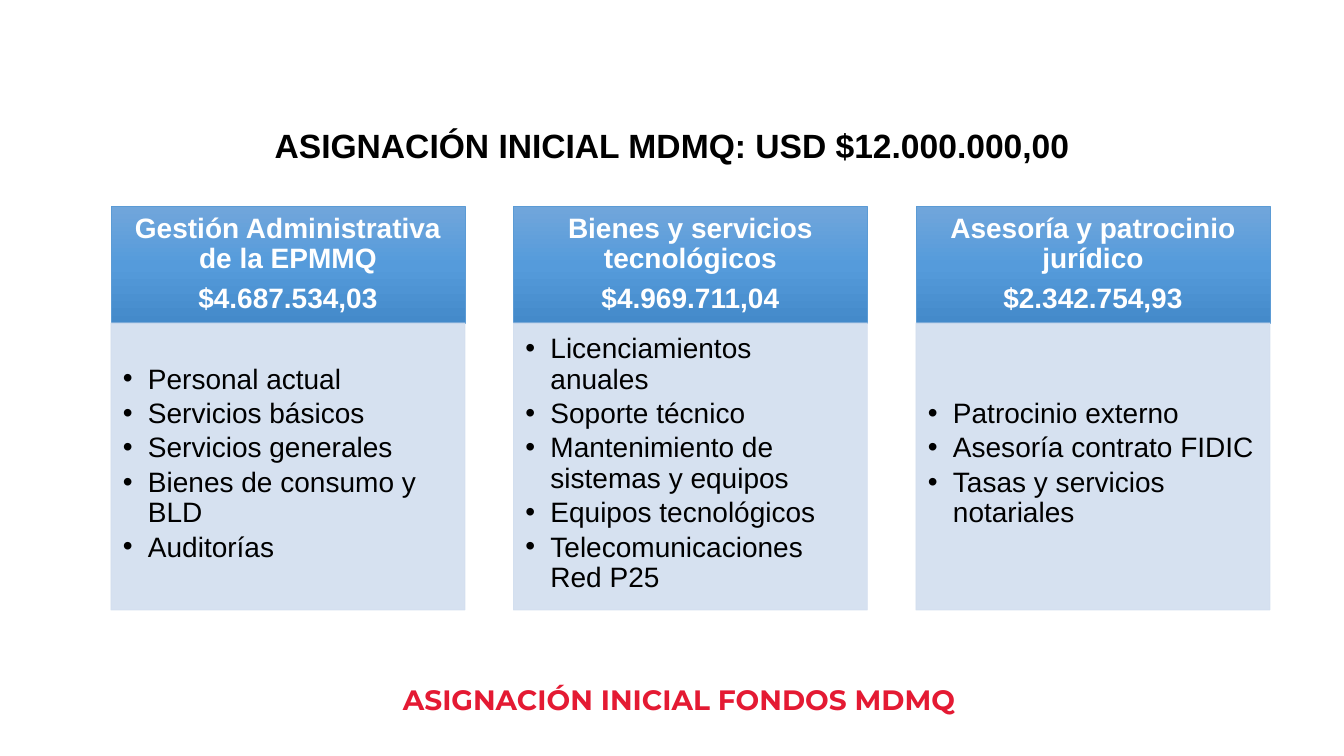
"""Build the slide on the initial MDMQ budget allocation."""
from copy import deepcopy
from dataclasses import dataclass

from lxml.etree import SubElement
from pptx import Presentation
from pptx.dml.color import RGBColor as Rgb
from pptx.enum.shapes import MSO_SHAPE as Shape
from pptx.enum.text import MSO_ANCHOR as Anchor, PP_ALIGN as Align
from pptx.oxml.ns import qn
from pptx.util import Pt

TITLE = "ASIGNACIÓN INICIAL MDMQ: USD $12.000.000,00"
FOOT = "ASIGNACIÓN INICIAL FONDOS MDMQ"
FUNDS = [
    ("Gestión Administrativa de la EPMMQ", "$4.687.534,03",
     ["Personal actual", "Servicios básicos", "Servicios generales",
      "Bienes de consumo y BLD", "Auditorías"]),
    ("Bienes y servicios tecnológicos", "$4.969.711,04",
     ["Licenciamientos anuales", "Soporte técnico",
      "Mantenimiento de sistemas y equipos", "Equipos tecnológicos",
      "Telecomunicaciones Red P25"]),
    ("Asesoría y patrocinio jurídico", "$2.342.754,93",
     ["Patrocinio externo", "Asesoría contrato FIDIC",
      "Tasas y servicios notariales"]),
]


@dataclass(frozen=True)
class Theme:
    """Colours, fonts and type sizes."""
    sans: str = "Arial"
    brand: str = "Montserrat"
    big: int = 24
    text: int = 20
    dark: str = "000000"
    light: str = "FFFFFF"
    red: str = "E41A33"
    edge: str = "5B9BD5"
    pale: str = "D2DEEF"
    fade: tuple = ((0, "71A6DB"), (0.5, "559BDB"), (1, "448ACA"))


THEME = Theme()
LEFT, RIGHT, WIDE = 111, 1270, 354
TOP, HEAD, BODY = 206, 117, 287
STEP = (RIGHT - LEFT - WIDE) / (len(FUNDS) - 1)


def px(n):
    """Turn pixels into EMU."""
    return round(n * 914400 / 100.8)


def style(para, size, color, face=THEME.sans, bold=False):
    """Set the font of a paragraph."""
    font = para.font
    font.name, font.size, font.bold = face, Pt(size), bold
    font.color.rgb = Rgb.from_string(color)


def label(slide, spot, text, size, color, face, align):
    """Add a bold line of text."""
    box = slide.shapes.add_textbox(*map(px, spot))
    box.text_frame.word_wrap = True
    para = box.text_frame.paragraphs[0]
    para.text, para.alignment = text, align
    style(para, size, color, face, True)


def panel(slide, spot, edge, pads, lines, align, gap):
    """Add a rectangle with its paragraphs."""
    box = slide.shapes.add_shape(Shape.RECTANGLE, *map(px, spot))
    box.shadow.inherit = False
    box.line.color.rgb = Rgb.from_string(edge)
    box.line.width = Pt(0.5)
    frame = box.text_frame
    frame.word_wrap = True
    frame.vertical_anchor = Anchor.MIDDLE
    (frame.margin_left, frame.margin_top,
     frame.margin_right, frame.margin_bottom) = map(px, pads)
    frame.text = "\n".join(lines)
    for para in frame.paragraphs:
        para.alignment, para.line_spacing = align, 0.9
        para.space_after = Pt(gap)
    return box


def shade(box):
    """Fill a header with the three-stop gradient."""
    box.fill.gradient()
    box.fill.gradient_angle = 270
    stops = box._element.spPr.find(qn("a:gradFill")).find(qn("a:gsLst"))
    stops.append(deepcopy(stops[0]))
    for stop, (place, color) in zip(box.fill.gradient_stops, THEME.fade):
        stop.position = place
        stop.color.rgb = Rgb.from_string(color)


def header(slide, left, name, sum_):
    """Add a fund's name and amount."""
    box = panel(slide, (left, TOP, WIDE, HEAD), THEME.edge, (16, 9, 16, 9),
                [name, sum_], Align.CENTER, 7)
    shade(box)
    for para in box.text_frame.paragraphs:
        style(para, THEME.text, THEME.light, bold=True)


def items(slide, left, uses):
    """Add a fund's bulleted uses."""
    box = panel(slide, (left, TOP + HEAD, WIDE, BODY), THEME.pale,
                (12, 12, 16, 17), uses, Align.LEFT, 3)
    box.fill.solid()
    box.fill.fore_color.rgb = Rgb.from_string(THEME.pale)
    for color in box._element.spPr.iter(qn("a:srgbClr")):
        SubElement(color, qn("a:alpha"), val="90000")
    for para in box.text_frame.paragraphs:
        props = para._p.get_or_add_pPr()
        props.set("marL", str(px(25)))
        props.set("indent", str(px(-25)))
        SubElement(props, qn("a:buFont"), typeface=THEME.sans)
        SubElement(props, qn("a:buChar"), char="•")
        style(para, THEME.text, THEME.dark)


def main():
    """Draw and save the slide."""
    deck = Presentation()
    deck.slide_width, deck.slide_height = px(1344), px(756)
    slide = deck.slides.add_slide(deck.slide_layouts[6])
    for i, (name, sum_, uses) in enumerate(FUNDS):
        left = LEFT + i * STEP
        header(slide, left, name, sum_)
        items(slide, left, uses)
    label(slide, (393, 678, 727, 44), FOOT, THEME.text, THEME.red,
          THEME.brand, Align.LEFT)
    label(slide, (257, 120, 830, 50), TITLE, THEME.big, THEME.dark,
          THEME.sans, Align.CENTER)
    deck.save("out.pptx")


if __name__ == "__main__":
    main()
